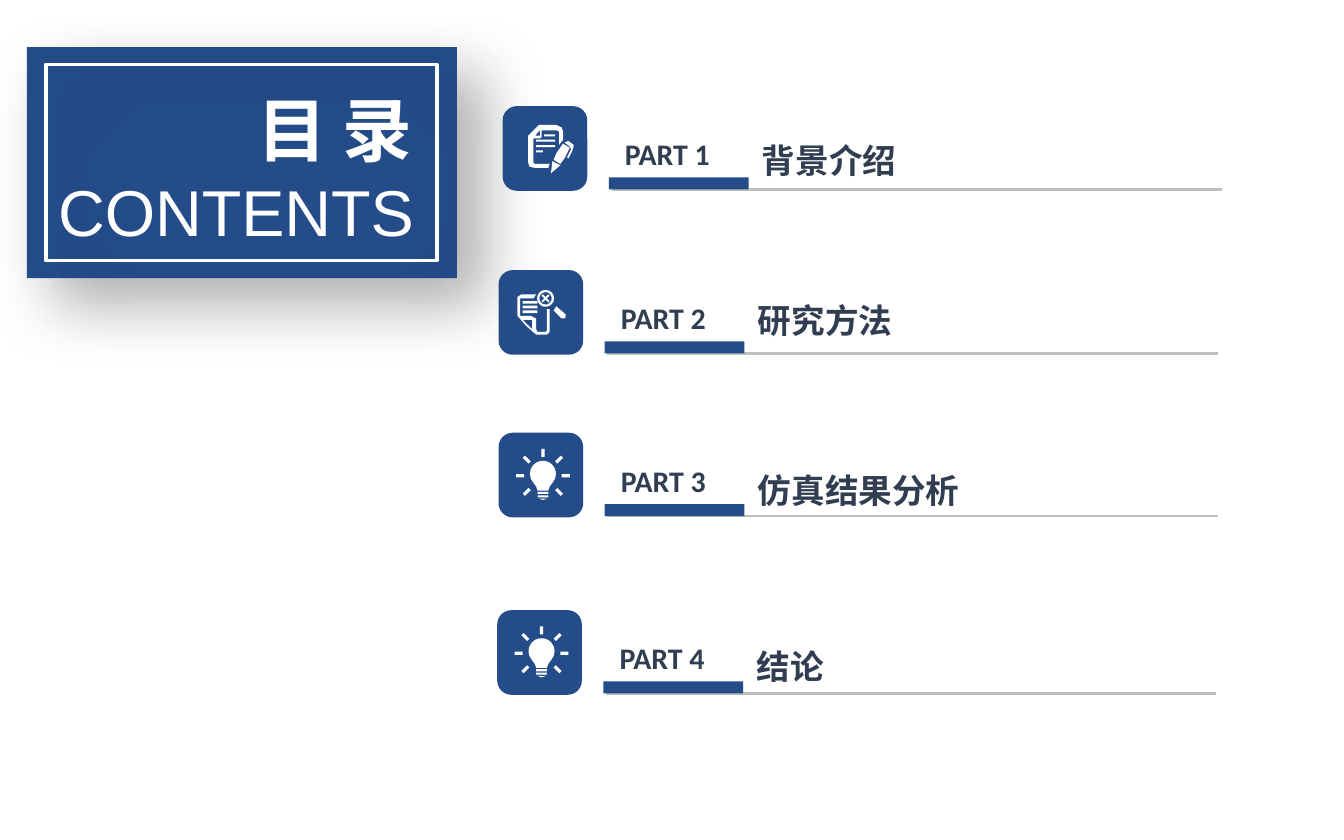
from math import cos, radians, sin

from lxml import etree
from pptx import Presentation
from pptx.dml.color import RGBColor
from pptx.enum.shapes import MSO_CONNECTOR as Connector, MSO_SHAPE as Shape
from pptx.enum.text import MSO_ANCHOR as Anchor, MSO_AUTO_SIZE as AutoSize, PP_ALIGN as Align
from pptx.oxml.ns import qn
from pptx.util import Inches, Pt

NAVY = RGBColor(0x24, 0x4C, 0x89)
INK = RGBColor(0x31, 0x3D, 0x51)
SILVER = RGBColor(0xBF, 0xBF, 0xBF)
WHITE = RGBColor(0xFF, 0xFF, 0xFF)
CJK_FONT = "Noto Sans CJK SC"
TILE = 0.63


def arc(x, y, radius, start=0, stop=360, step=20):
    """Return points along an arc, in hundredths of an inch."""
    return [(x + radius * cos(radians(a)), y + radius * sin(radians(a)))
            for a in range(start, stop + 1, step)]


def bar(left, top, right, bottom):
    """Return the corners of an upright bar."""
    return [(left, top), (right, top), (right, bottom), (left, bottom)]


def ray(angle, x=33, y=32, inner=14, outer=20, half=1.2):
    """Return the corners of a light ray pointing away from a centre."""
    c, s = cos(radians(angle)), sin(radians(angle))
    corners = bar(inner, -half, outer, half)
    return [(x + u * c - v * s, y + u * s + v * c) for u, v in corners]


NOTE_ICON = [
    [(27, 14), (40, 14), (44, 16), (45, 19), (45, 25), (42, 29), (42, 19), (40, 18),
     (29, 18), (29, 23), (28, 24), (23, 24), (23, 42), (24, 43), (35, 43), (34, 46),
     (24, 46), (20, 45), (19, 42), (19, 22)],
    [(24, 22), (28, 22), (28, 18)],
    bar(31, 21, 39, 22.5), bar(25, 25, 39, 26.5), bar(25, 29, 39, 30.5), bar(25, 33, 30, 34.5),
    [(49, 26), (53, 29), (52, 33), (49, 39), (48, 38), (51, 32), (50, 30), (46, 27)],
    [(50, 31), (46, 39), (43, 43), (38, 40), (40, 35), (45, 28)],
    [(43, 44), (36, 50), (37, 41)],
]
SEARCH_ICON = [
    [(14, 20), (17, 18), (28, 18), (26, 21), (16, 21), (16, 34), (24, 34), (28, 36),
     (28, 44), (29, 46), (35, 46), (36, 45), (36, 29), (38, 29), (38, 46), (36, 48),
     (28, 48), (21, 42), (14, 34)],
    [(18, 37), (25, 37), (25, 44)],
    bar(18, 23, 29, 25), bar(18, 26.5, 29, 28.5), bar(18, 30, 29, 32),
    arc(35, 21, 6.3), arc(35, 21, 4.6),
    [(32, 19), (33, 18), (35, 20), (37, 18), (38, 19), (36, 21),
     (38, 23), (37, 24), (35, 22), (33, 24), (32, 23), (34, 21)],
    [(43, 27), (50, 33), (50, 35), (49, 36), (47, 36), (41, 30)],
]
BULB_ICON = [
    arc(33, 30.5, 9.7, -220, 40) + [(38, 40), (37, 43), (29, 43), (28, 40)],
    bar(29, 44, 37, 45.5), bar(29, 46.5, 37, 48), [(30, 49), (36, 49), (33, 50)],
] + [ray(angle) for angle in (0, 45, 135, 180, 225, 270, 315)]

PARTS = [
    (3.74, 0.79, "PART 1", "背景介绍", 0.14, NOTE_ICON),
    (3.71, 2.01, "PART 2", "研究方法", 0.11, SEARCH_ICON),
    (3.71, 3.22, "PART 3", "仿真结果分析", 0.17, BULB_ICON),
    (3.70, 4.54, "PART 4", "结论", 0.16, BULB_ICON),
]


def write(holder, text, size, color, font="Arial", bold=False, align=Align.LEFT,
          spacing=1.0, anchor=Anchor.TOP, wrap=True, inset=None):
    """Fill a text holder with one formatted paragraph."""
    frame = holder.text_frame
    frame.auto_size = AutoSize.NONE
    frame.word_wrap = wrap
    frame.vertical_anchor = anchor
    if inset is not None:
        frame.margin_left = frame.margin_right = Inches(inset)
        frame.margin_top = frame.margin_bottom = Inches(inset)
    paragraph = frame.paragraphs[0]
    paragraph.alignment = align
    paragraph.line_spacing = spacing
    run = paragraph.add_run()
    run.text = text
    run.font.name = font
    run.font.size = Pt(size)
    run.font.bold = bold
    run.font.color.rgb = color
    etree.SubElement(run.font._element, qn("a:ea"), typeface=CJK_FONT)


def add_textbox(slide, left, top, width, height, text, **style):
    """Add a text box holding one formatted paragraph."""
    box = slide.shapes.add_textbox(Inches(left), Inches(top), Inches(width), Inches(height))
    write(box, text, **style)


def add_block(slide, kind, left, top, width, height, fill=None, outline=None):
    """Add a preset shape with a plain fill or a plain outline."""
    block = slide.shapes.add_shape(kind, Inches(left), Inches(top), Inches(width), Inches(height))
    block.shadow.inherit = False
    if fill is None:
        block.fill.background()
    else:
        block.fill.solid()
        block.fill.fore_color.rgb = fill
    if outline is None:
        block.line.fill.background()
    else:
        block.line.color.rgb = outline
        block.line.width = Pt(2)
    return block


def cast_shadow(block):
    """Give a shape a soft shadow to the lower right."""
    effects = block._element.spPr.find(qn("a:effectLst"))
    shadow = etree.SubElement(effects, qn("a:outerShdw"), blurRad=str(Pt(35)), dist=str(Pt(20)),
                              dir="2700000", algn="tl", rotWithShape="0")
    color = etree.SubElement(shadow, qn("a:srgbClr"), val="000000")
    etree.SubElement(color, qn("a:alpha"), val="30000")


def add_icon(slide, left, top, contours):
    """Draw white contours, given in hundredths of an inch from a tile's corner."""
    placed = [[(Inches(left + x / 100), Inches(top + y / 100)) for x, y in contour]
              for contour in contours]
    builder = slide.shapes.build_freeform(*placed[0][0])
    builder.add_line_segments(placed[0][1:], close=True)
    for contour in placed[1:]:
        builder.move_to(*contour[0])
        builder.add_line_segments(contour[1:], close=True)
    icon = builder.convert_to_shape()
    icon.shadow.inherit = False
    icon.fill.solid()
    icon.fill.fore_color.rgb = WHITE
    icon.line.fill.background()


def add_heading_panel(slide, left, top, width, height):
    """Place the framed panel with the slide title."""
    cast_shadow(add_block(slide, Shape.RECTANGLE, left, top, width, height, fill=NAVY))
    cast_shadow(add_block(slide, Shape.RECTANGLE, left + 0.14, top + 0.13,
                          width - 0.29, height - 0.26, outline=WHITE))
    add_textbox(slide, left - 0.14, top + 0.88, width - 0.08, 0.68, "CONTENTS",
                size=34.7, color=WHITE, align=Align.RIGHT)
    title = slide.shapes.title
    title.left, title.top = Inches(left + 1.3), Inches(top + 0.24)
    title.width, title.height = Inches(1.67), Inches(0.73)
    write(title, "目 录", size=37.3, color=WHITE, bold=True,
          align=Align.RIGHT, anchor=Anchor.MIDDLE)
    slide.shapes._spTree.append(title._element)


def add_part(slide, left, top, label, topic, topic_drop, icon):
    """Place one contents entry: tile, icon, label, topic and rule."""
    tile = add_block(slide, Shape.ROUNDED_RECTANGLE, left, top, TILE, TILE, fill=NAVY)
    tile.adjustments[0] = 0.167
    add_icon(slide, left, top, icon)
    add_textbox(slide, left + 0.91, top + 0.17, 0.8, 0.3, label, size=16, color=INK,
                font="Calibri", bold=True, spacing=1.2, wrap=False, inset=0)
    add_textbox(slide, left + 1.83, top + topic_drop, 3.68, 0.43, topic, size=18, color=INK,
                font=CJK_FONT, bold=True, spacing=1.2)
    rule = slide.shapes.add_connector(Connector.STRAIGHT, Inches(left + 5.35), Inches(top + 0.62),
                                      Inches(left + 0.81), Inches(top + 0.62))
    rule.line.color.rgb = SILVER
    rule.line.width = Pt(1.5)
    etree.SubElement(rule._element.spPr, qn("a:effectLst"))
    add_block(slide, Shape.RECTANGLE, left + 0.79, top + 0.53, 1.04, 0.09, fill=NAVY)


def main():
    """Build the contents slide."""
    deck = Presentation()
    deck.slide_width, deck.slide_height = Inches(10), Inches(6.25)
    slide = deck.slides.add_slide(deck.slide_layouts[5])
    add_heading_panel(slide, 0.2, 0.35, 3.2, 1.72)
    for part in PARTS:
        add_part(slide, *part)
    deck.save("out.pptx")


if __name__ == "__main__":
    main()
